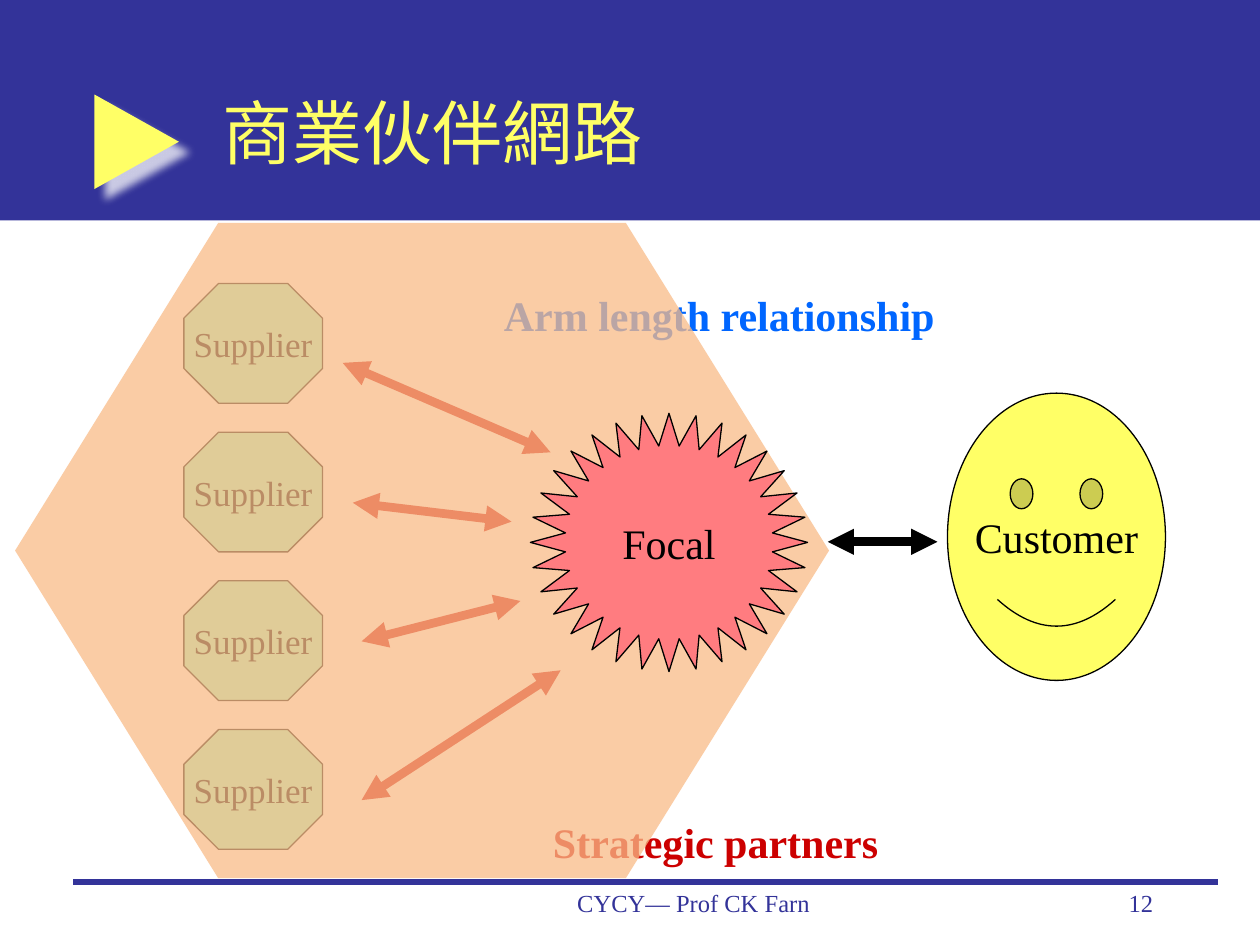
import pptx
import pptx.dml.color
import pptx.enum.shapes
import pptx.enum.text
import pptx.oxml
import pptx.oxml.ns
import pptx.util
from lxml import etree

Inches = pptx.util.Inches
RGBColor = pptx.dml.color.RGBColor
SHAPE = pptx.enum.shapes.MSO_SHAPE
ALIGN = pptx.enum.text.PP_ALIGN
ANCHOR = pptx.enum.text.MSO_ANCHOR
qn = pptx.oxml.ns.qn

NAVY = RGBColor(0x33, 0x33, 0x99)
YELLOW = RGBColor(0xFF, 0xFF, 0x66)
MINT = RGBColor(0x99, 0xFF, 0xCC)
PEACH = RGBColor(0xF9, 0xBB, 0x87)
PINK = RGBColor(0xFF, 0x7C, 0x80)
BLUE = RGBColor(0x00, 0x66, 0xFF)
RED = RGBColor(0xCC, 0x00, 0x00)
BLACK = RGBColor(0x00, 0x00, 0x00)
SERIF = "Times New Roman"

presentation = pptx.Presentation()
presentation.slide_width = Inches(10)
presentation.slide_height = Inches(7.5)
slide = presentation.slides.add_slide(presentation.slide_layouts[6])


def add_block(kind, box, fill=None, outlined=False, text="", size=24, color=BLACK,
              font=SERIF, bold=False, align=ALIGN.CENTER, anchor=ANCHOR.MIDDLE, wrap=False):
    """Add a filled preset shape, or a text box when kind is None, with one line of text."""
    lengths = [Inches(value) for value in box]
    if kind is None:
        block = slide.shapes.add_textbox(*lengths)
    else:
        block = slide.shapes.add_shape(kind, *lengths)
        block.shadow.inherit = False
        block.fill.solid()
        block.fill.fore_color.rgb = fill
        if outlined:
            block.line.color.rgb = BLACK
            block.line.width = pptx.util.Pt(0.75)
        else:
            block.line.fill.background()
    if text:
        frame = block.text_frame
        frame.word_wrap = wrap
        frame.vertical_anchor = anchor
        paragraph = frame.paragraphs[0]
        paragraph.alignment = align
        run = paragraph.add_run()
        run.text = text
        style = {"name": font, "size": pptx.util.Pt(size), "bold": bold}
        for attribute, value in style.items():
            setattr(run.font, attribute, value)
        run.font.color.rgb = color
    return block


def add_line(start, end, color, width, arrows=True):
    points = [Inches(value) for value in (*start, *end)]
    line = slide.shapes.add_connector(pptx.enum.shapes.MSO_CONNECTOR.STRAIGHT, *points)
    line.line.color.rgb = color
    line.line.width = pptx.util.Pt(width)
    if arrows:
        outline = line.line._get_or_add_ln()
        for tag in ("a:headEnd", "a:tailEnd"):
            etree.SubElement(outline, qn(tag), type="triangle")
    etree.SubElement(line._element.spPr, qn("a:effectLst"))


# Banner, title and footer
add_block(SHAPE.RECTANGLE, (0, 0, 10, 1.75), NAVY)
marker = add_block(SHAPE.RIGHT_ARROW, (0.75, 0.75, 0.67, 0.75), YELLOW)
marker.adjustments[0] = 0.38
marker.adjustments[1] = 1
marker._element.spPr.find(qn("a:effectLst")).append(pptx.oxml.parse_xml(
    f'<a:outerShdw {pptx.oxml.ns.nsdecls("a")} blurRad="{pptx.util.Pt(5)}" '
    f'dist="{pptx.util.Pt(8.5)}" dir="2700000" algn="ctr" rotWithShape="0">'
    '<a:srgbClr val="FFFFFF"><a:alpha val="75000"/></a:srgbClr></a:outerShdw>'))
add_line((0.58, 7), (9.67, 7), NAVY, 3, arrows=False)
add_block(None, (3.92, 7, 3.17, 0.5), text="CYCY— Prof CK Farn", size=14, color=NAVY,
          anchor=ANCHOR.TOP, wrap=True)
add_block(None, (7.17, 7, 2.08, 0.5), text="12", size=14, color=NAVY,
          align=ALIGN.RIGHT, anchor=ANCHOR.TOP, wrap=True)
add_block(None, (1.67, 0.42, 7.58, 1.25), text="商業伙伴網路", size=40, color=YELLOW,
          font="Arial", align=ALIGN.LEFT, wrap=True)

# Customer and suppliers
add_block(SHAPE.SMILEY_FACE, (7.52, 3.12, 1.73, 2.28), YELLOW, True, "Customer")
for row in range(4):
    supplier = add_block(SHAPE.OCTAGON, (1.46, 2.25 + 1.18 * row, 1.1, 0.95), MINT, True,
                         "Supplier", size=20)
    supplier.adjustments[0] = 0.29

# Relationships
for label, box, color in (
    ("Arm length relationship", (3.9, 2.25, 3.65, 0.51), BLUE),
    ("Strategic partners", (4.29, 6.43, 2.81, 0.51), RED),
):
    add_block(None, box, text=label, color=color, bold=True, align=ALIGN.LEFT,
              anchor=ANCHOR.TOP)
for supplier_end, focal_end in (
    ((2.72, 2.88), (4.37, 3.59)),
    ((2.8, 3.99), (4.06, 4.14)),
    ((2.87, 5.09), (4.13, 4.77)),
    ((2.87, 6.35), (4.45, 5.32)),
):
    add_line(supplier_end, focal_end, RED, 5)

# Translucent network area with the focal firm on top
network = add_block(SHAPE.HEXAGON, (0.12, 1.77, 6.46, 5.2), PEACH)
network.adjustments[0] = 0.31
network_color = network._element.spPr.find(qn("a:solidFill")).find(qn("a:srgbClr"))
etree.SubElement(network_color, qn("a:alpha"), val="75000")
add_block(SHAPE.STAR_32_POINT, (4.21, 3.28, 2.2, 2.05), PINK, True, "Focal")
add_line((6.57, 4.3), (7.44, 4.3), BLACK, 5)

presentation.save("out.pptx")
